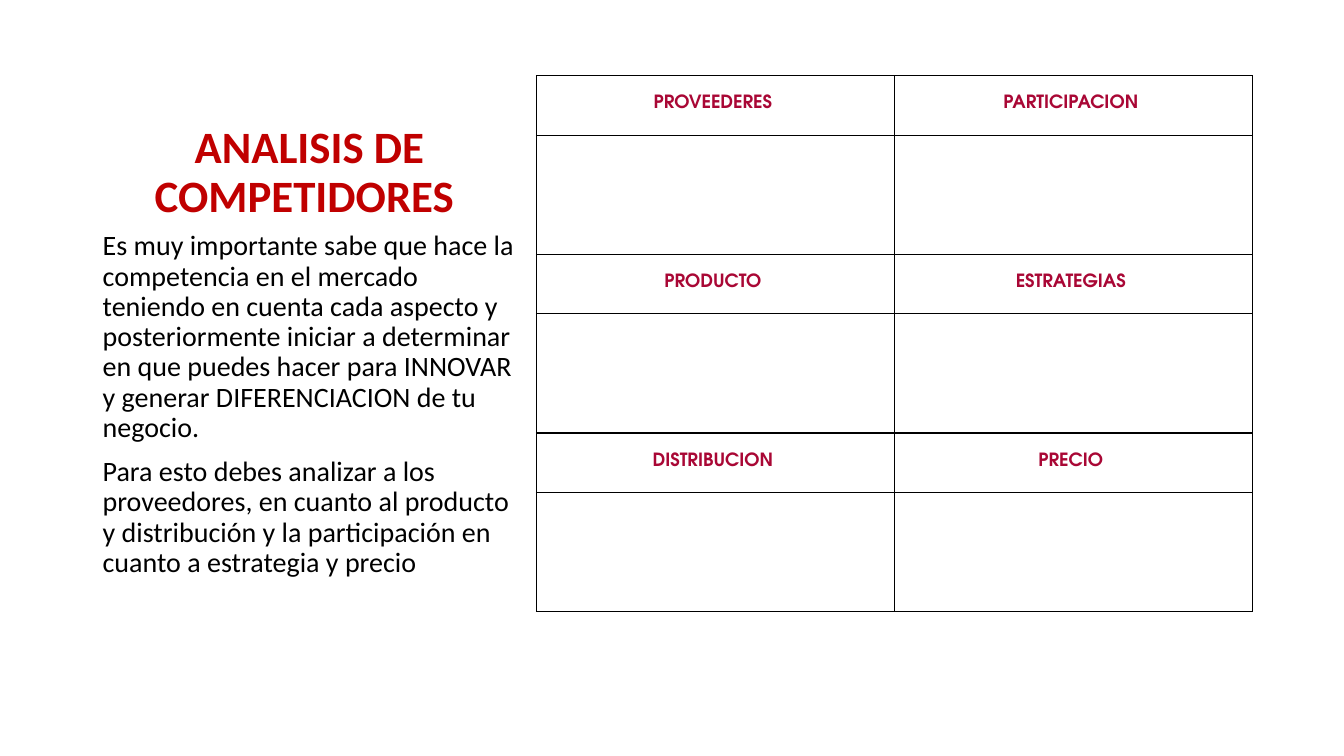
from lxml.etree import SubElement
from pptx import Presentation
from pptx.dml.color import RGBColor
from pptx.enum.text import MSO_ANCHOR, PP_ALIGN
from pptx.oxml.ns import qn
from pptx.util import Inches, Pt

RED = RGBColor(0xC0, 0x00, 0x00)
CRIMSON = RGBColor(0xA9, 0x07, 0x35)
BLACK = RGBColor(0x00, 0x00, 0x00)

TITLE = "ANALISIS DE COMPETIDORES "
EXPLANATION = [
    "Es muy importante sabe que hace la competencia en el mercado teniendo en cuenta "
    "cada aspecto y posteriormente iniciar a determinar en que puedes hacer para "
    "INNOVAR y generar DIFERENCIACION de tu negocio.",
    "Para esto debes analizar a los proveedores, en cuanto al producto y distribución "
    "y la participación en cuanto a estrategia y precio",
]
ASPECTS = [
    ("PROVEEDERES ", "PARTICIPACION "),
    ("PRODUCTO ", "ESTRATEGIAS "),
    ("DISTRIBUCION ", "PRECIO "),
]


def apply(target, values):
    for name, value in values.items():
        setattr(target, name, value)


class CompetitorSlide:
    title_font = {"name": "Calibri", "size": Pt(32), "bold": True}
    body_font = {"name": "Calibri", "size": Pt(20)}
    header_font = {"name": "TeX Gyre Adventor", "size": Pt(13), "bold": True}
    title_format = {"alignment": PP_ALIGN.CENTER, "line_spacing": 0.9}
    body_format = {"line_spacing": 0.9, "space_before": Pt(10)}
    header_format = {"alignment": PP_ALIGN.CENTER, "line_spacing": 1.15}
    header_cell = {
        "margin_left": Inches(0.06),
        "margin_right": Inches(0.06),
        "margin_top": Inches(0),
        "margin_bottom": Inches(0.06),
        "vertical_anchor": MSO_ANCHOR.MIDDLE,
    }

    def __init__(self, deck):
        self.page = deck.slides.add_slide(deck.slide_layouts[6])

    def fill_text(self, frame, texts, font, color, layout):
        for index, text in enumerate(texts):
            para = frame.paragraphs[0] if index == 0 else frame.add_paragraph()
            apply(para, layout)
            span = para.add_run()
            span.text = text
            apply(span.font, font)
            span.font.color.rgb = color

    def text(self, left, top, width, height, texts, font, color, layout, anchor):
        box = self.page.shapes.add_textbox(
            Inches(left), Inches(top), Inches(width), Inches(height)
        )
        apply(box.text_frame, {"word_wrap": True, "vertical_anchor": anchor})
        self.fill_text(box.text_frame, texts, font, color, layout)

    def border(self, cell):
        properties = cell._tc.get_or_add_tcPr()
        for index, side in enumerate(("lnL", "lnR", "lnT", "lnB")):
            line = properties.makeelement(qn(f"a:{side}"), {"w": str(Pt(1))})
            properties.insert(index, line)
            fill = SubElement(line, qn("a:solidFill"))
            SubElement(fill, qn("a:srgbClr"), val=str(BLACK))

    def aspect_table(self, left, top, width, height, aspects):
        row_count = 2 * len(aspects)
        table = self.page.shapes.add_table(
            row_count, 2, Inches(left), Inches(top), Inches(width), Inches(height)
        ).table
        apply(table, {"first_row": False, "horz_banding": False})
        unit = height / (3 * len(aspects))
        for index, row in enumerate(table.rows):
            row.height = Inches(unit * (1 + index % 2))
        for cell in table.iter_cells():
            cell.fill.background()
            self.border(cell)
        for index, pair in enumerate(aspects):
            for column, label in enumerate(pair):
                cell = table.cell(2 * index, column)
                apply(cell, self.header_cell)
                self.fill_text(cell.text_frame, [label], self.header_font, CRIMSON,
                               self.header_format)


def main():
    deck = Presentation()
    apply(deck, {"slide_width": Inches(13.33), "slide_height": Inches(7.5)})
    slide = CompetitorSlide(deck)
    slide.text(0.92, 0.5, 4.3, 1.75, [TITLE], slide.title_font, RED,
               slide.title_format, MSO_ANCHOR.BOTTOM)
    slide.aspect_table(5.32, 0.75, 7.1, 5.32, ASPECTS)
    slide.text(0.92, 2.25, 4.3, 4.17, EXPLANATION, slide.body_font, BLACK,
               slide.body_format, MSO_ANCHOR.TOP)
    deck.save("out.pptx")


if __name__ == "__main__":
    main()
